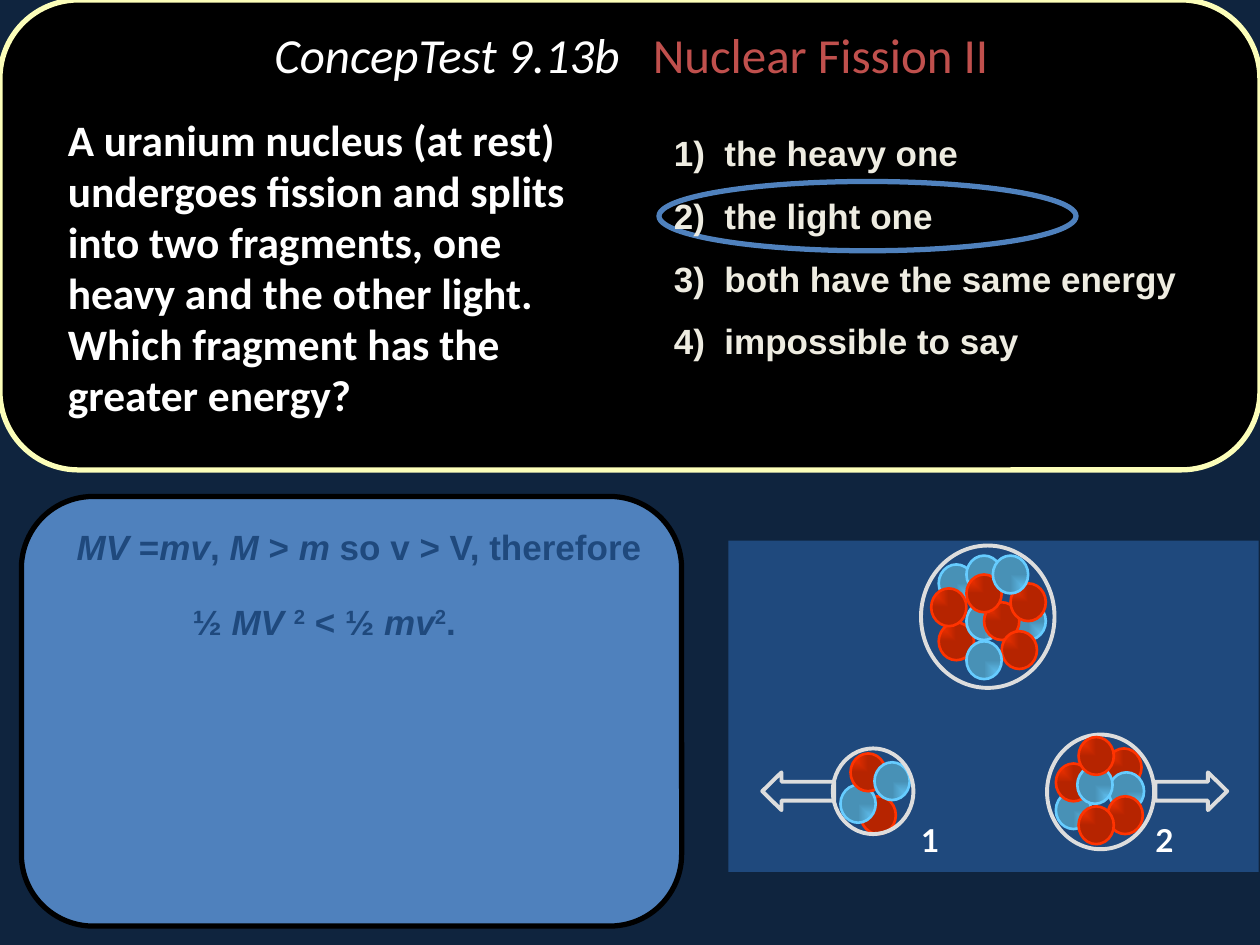
import pptx
import pptx.util
import pptx.dml.color
import pptx.enum.shapes
import pptx.enum.text
import pptx.oxml

Pt = pptx.util.Pt
RGB = pptx.dml.color.RGBColor
Kind = pptx.enum.shapes.MSO_SHAPE
Align = pptx.enum.text.PP_ALIGN
Anchor = pptx.enum.text.MSO_ANCHOR
Fit = pptx.enum.text.MSO_AUTO_SIZE

NIGHT = RGB(0x0F, 0x24, 0x3E)
NAVY = RGB(0x1F, 0x49, 0x7D)
BLUE = RGB(0x4F, 0x81, 0xBD)
BLACK = RGB(0, 0, 0)
WHITE = RGB(0xFF, 0xFF, 0xFF)
CREAM = RGB(0xFC, 0xFE, 0xB9)
SAND = RGB(0xEE, 0xEC, 0xE1)
BRICK = RGB(0xC0, 0x50, 0x4D)
GREY = RGB(0xDD, 0xDD, 0xDD)
SKY = RGB(0x66, 0xCC, 0xFF)
RED = RGB(0xFF, 0x33, 0x00)

# The grid has 100 columns and 75 rows of square cells
COLS = 100
BALL = (2.8, 3)

# Ball colour and the corner (left, top, right, bottom) its light comes from
LIGHT = {"n": (SKY, (100, 100, 0, 0)), "p": (RED, (0, 0, 100, 100))}

# Balls of each nucleus, back to front: kind, column, row
WHOLE = [("n", 74.5, 44.8), ("p", 74.5, 49.4), ("n", 80.2, 47.8),
         ("n", 76.7, 47.8), ("n", 76.7, 44.1), ("p", 78.1, 47.8),
         ("p", 79.5, 50.1), ("n", 76.7, 50.9), ("p", 73.9, 46.7),
         ("p", 80.2, 46.3), ("p", 76.7, 45.6), ("n", 78.8, 44.1)]
SMALL = [("p", 68.3, 63.2), ("n", 66.7, 62.3), ("p", 67.5, 59.8),
         ("n", 69.4, 60.5)]
LARGE_BACK = [("p", 87.8, 59.4), ("n", 88, 61.3), ("n", 83.8, 62.8),
              ("p", 83.8, 60.6), ("p", 87.9, 63.2)]
LARGE_FRONT = [("n", 85.5, 60.8), ("p", 85.6, 64), ("p", 85.6, 58.5)]


class Board:
    """Holds the style and the slide being drawn."""

    def __init__(self, deck):
        self.cell = deck.slide_width / COLS
        self.slide = deck.slides.add_slide(deck.slide_layouts[6])
        self.home = self.slide.shapes
        back = self.slide.background.fill
        back.solid()
        back.fore_color.rgb = NIGHT

    def span(self, *cells):
        return [round(c * self.cell) for c in cells]

    def group(self):
        self.home = self.slide.shapes.add_group_shape().shapes

    def shape(self, kind, at, fill=None, line=None, width=3, adjust=()):
        item = self.home.add_shape(kind, *self.span(*at))
        item.shadow.inherit = False
        for i, value in enumerate(adjust):
            item.adjustments[i] = value
        for part, tint in ((item.fill, fill), (item.line.fill, line)):
            if tint is None:
                part.background()
            else:
                part.solid()
                part.fore_color.rgb = tint
        if line is not None:
            item.line.width = Pt(width)
        return item

    def ring(self, *at):
        self.shape(Kind.OVAL, at, line=GREY, width=2.25)

    def balls(self, spots):
        for kind, col, row in spots:
            tint, light = LIGHT[kind]
            ball = self.shape(Kind.OVAL, (col, row, *BALL), tint, tint, 1.5)
            edges = " ".join(f'{side}="{share * 1000}"'
                             for side, share in zip("ltrb", light))
            grad = pptx.oxml.parse_xml(
                '<a:gradFill xmlns:a="http://schemas.openxmlformats.org/'
                'drawingml/2006/main" rotWithShape="1"><a:gsLst>'
                f'<a:gs pos="0"><a:srgbClr val="{tint}"/></a:gs>'
                f'<a:gs pos="100000"><a:srgbClr val="{tint}">'
                '<a:shade val="46275"/></a:srgbClr></a:gs></a:gsLst>'
                f'<a:path path="rect"><a:fillToRect {edges}/></a:path>'
                '</a:gradFill>')
            props = ball.fill._xPr
            props.replace(props.solidFill, grad)

    def text(self, at, paras, font, frame=None, para=None, gap=0, inset=0):
        """Each paragraph is a left indent and a list of (text, format)."""
        body = self.home.add_textbox(*self.span(*at)).text_frame
        for name, value in {"word_wrap": True, **(frame or {})}.items():
            setattr(body, name, value)
        if inset:
            body.margin_left, body.margin_right = self.span(inset, inset)
        for i, (left, runs) in enumerate(paras):
            line = body.paragraphs[0] if i == 0 else body.add_paragraph()
            for name, value in (para or {}).items():
                setattr(line, name, value)
            if i:
                line.space_before = Pt(gap)
            props = line._p.get_or_add_pPr()
            props.set("marL", str(self.span(left)[0]))
            props.set("indent", "0")
            for words, extra in runs:
                self.run(line, words, {**font, **extra})

    def run(self, line, words, font):
        run = line.add_run()
        run.text = words
        for name, value in font.items():
            if name == "tint":
                run.font.color.rgb = value
            elif name == "raised":
                run._r.get_or_add_rPr().set("baseline", str(value * 1000))
            else:
                setattr(run.font, name, value)


def main():
    deck = pptx.Presentation()
    deck.slide_width = pptx.util.Inches(10)
    deck.slide_height = pptx.util.Inches(7.5)
    board = Board(deck)
    slant, high = {"italic": True}, {"raised": 30}

    # Panels and title
    board.shape(Kind.ROUNDED_RECTANGLE, (1.7, 39.4, 52.4, 34.1), BLUE, BLACK,
                adjust=[0.167])
    board.shape(Kind.ROUNDED_RECTANGLE, (0, 0, 100, 37.3), BLACK, CREAM,
                adjust=[0.167])
    board.text((10.2, 0, 79.8, 9.2),
               [(0, [("ConcepTest 9.13b   ", slant),
                     ("Nuclear Fission II", {"tint": BRICK})])],
               {"name": "Calibri", "size": Pt(28), "tint": WHITE},
               {"vertical_anchor": Anchor.MIDDLE},
               {"alignment": Align.CENTER, "line_spacing": 0.9})

    # Mark around the right answer
    board.shape(Kind.OVAL, (52.3, 14.4, 33.1, 5.5), line=BLUE)

    # Proof
    bold = {"name": "Arial", "size": Pt(20), "bold": True}
    board.text((2, 40.2, 54.1, 11.5),
               [(3.1, [("MV", slant), (" =", {}), ("mv", slant), (", ", {}),
                       ("M", slant), (" > ", {}), ("m", slant),
                       (" so v > V, therefore", {})]),
                (12.3, [("½ ", {}), ("MV ", slant), ("2", high), (" < ½ ", {}),
                        ("mv", slant), ("2", high), (".", {})])],
               {**bold, "tint": NAVY}, {"auto_size": Fit.SHAPE_TO_FIT_TEXT},
               {"line_spacing": 1.3}, gap=11.5)

    # Choices
    picks = ["the heavy one", "the light one", "both have the same energy",
             "impossible to say"]
    board.text((52.5, 9.3, 44.4, 25),
               [(0, [(f"{i})  {pick}", {})]) for i, pick in enumerate(picks, 1)],
               {**bold, "tint": SAND}, para={"line_spacing": 1.2}, gap=7)

    # Question
    board.text((0, 8.7, 45.9, 27.3),
               [(4.4, [("A uranium nucleus (at rest) undergoes fission and "
                        "splits into two fragments, one heavy and the other "
                        "light.  Which fragment has the greater energy?", {})])],
               {"name": "Calibri", "size": Pt(24.8), "bold": True,
                "tint": WHITE}, para={"line_spacing": 0.98})

    # Fission drawing: whole nucleus above, two fragments below
    board.group()
    board.shape(Kind.RECTANGLE, (57.8, 42.9, 42.1, 26.3), NAVY)
    board.ring(73.1, 43.3, 10.6, 11.3)
    board.balls(WHOLE)
    board.balls(SMALL)
    board.ring(66.1, 59.4, 6.4, 6.8)
    board.balls(LARGE_BACK)
    board.ring(83.1, 58.3, 8.5, 9.1)
    board.balls(LARGE_FRONT)

    # Arrows and numbers of the fragments
    for kind, col in ((Kind.LEFT_ARROW, 60.5), (Kind.RIGHT_ARROW, 91.7)):
        board.shape(kind, (col, 61.3, 5.7, 3), line=GREY, width=2.25,
                    adjust=[0.5, 0.51])
    for label, col in (("1", 72), ("2", 90.6)):
        board.text((col, 64.7, 4.2, 5.1), [(0, [(label, {})])],
                   {"name": "Lato", "size": Pt(18), "bold": True,
                    "tint": WHITE},
                   {"word_wrap": False, "auto_size": Fit.SHAPE_TO_FIT_TEXT},
                   inset=1.1)

    deck.save("out.pptx")


if __name__ == "__main__":
    main()
